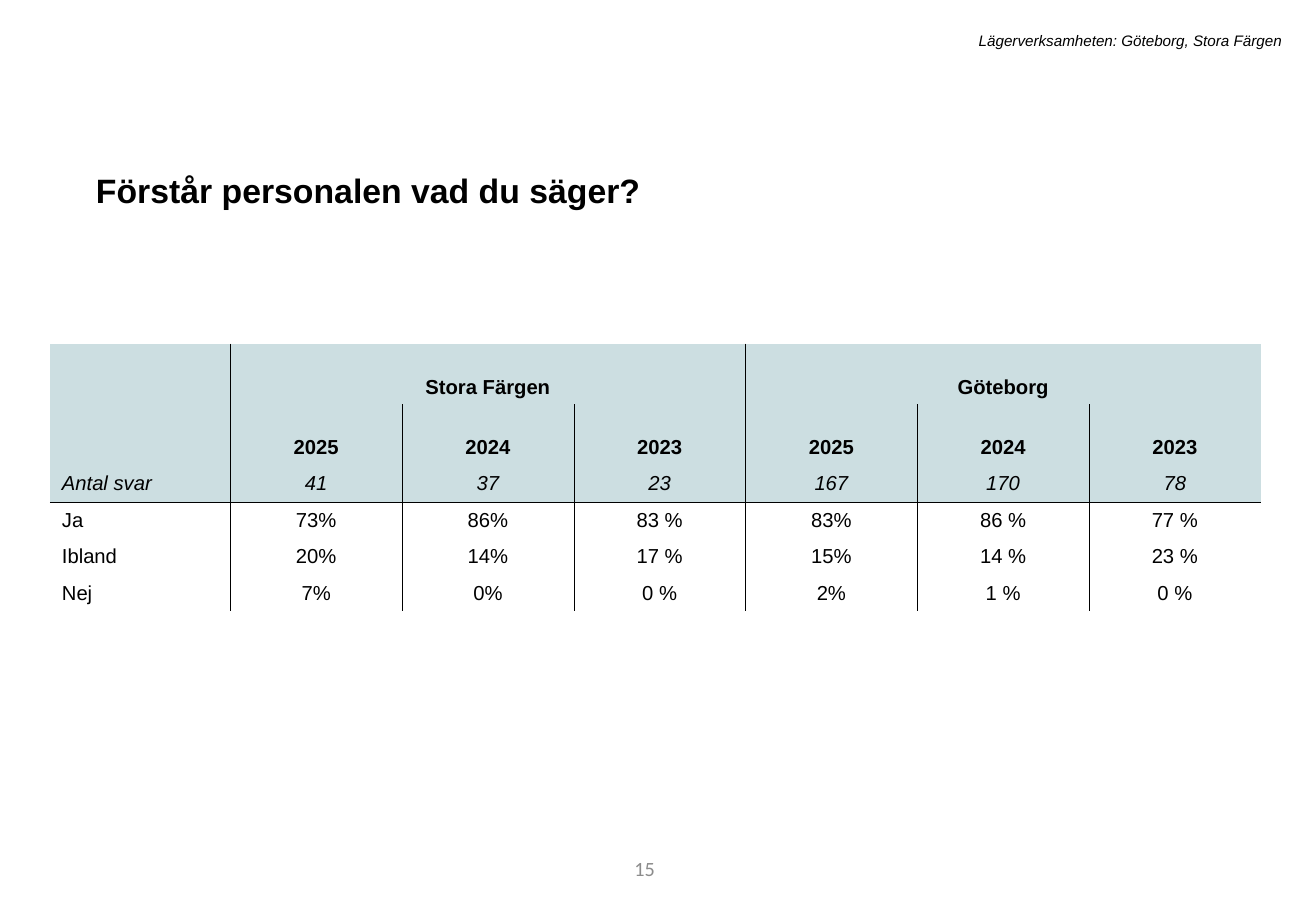
from lxml import etree
from pptx import Presentation
from pptx.dml.color import RGBColor
from pptx.enum.text import MSO_ANCHOR, MSO_AUTO_SIZE, PP_ALIGN
from pptx.oxml.ns import qn
from pptx.util import Pt

LEFT, CENTER, RIGHT = PP_ALIGN.LEFT, PP_ALIGN.CENTER, PP_ALIGN.RIGHT
TOP, MIDDLE, BOTTOM = MSO_ANCHOR.TOP, MSO_ANCHOR.MIDDLE, MSO_ANCHOR.BOTTOM
GROW = MSO_AUTO_SIZE.SHAPE_TO_FIT_TEXT
TITLE_ONLY_LAYOUT = 5
NO_STYLE = "{2D5ABB26-0587-4C30-8999-92F81FD0307C}"
BLACK, GREY, HEADER_FILL = "000000", "8C8C8C", "CCDEE1"
YEARS = ["2025", "2024", "2023"]
ROWS = [
    ["", "Stora Färgen", "", "", "Göteborg", "", ""],
    ["", *YEARS, *YEARS],
    ["Antal svar", "41", "37", "23", "167", "170", "78"],
    ["Ja", "73%", "86%", "83 %", "83%", "86 %", "77 %"],
    ["Ibland", "20%", "14%", "17 %", "15%", "14 %", "23 %"],
    ["Nej", "7%", "0%", "0 %", "2%", "1 %", "0 %"],
]
GROUP_STARTS = (1, 4)
COUNT_ROW = 2


def rgb(color):
    return RGBColor.from_string(color)


def set_format(target, values):
    for name, value in values.items():
        setattr(target, name, value)


def write(frame, text, color=BLACK, align=LEFT, **font_values):
    frame.text = text
    paragraph = frame.paragraphs[0]
    paragraph.alignment = align
    font = paragraph.runs[0].font if text else paragraph.font
    set_format(font, {"name": "Arial", "size": Pt(12), "bold": False, "italic": False, **font_values})
    font.color.rgb = rgb(color)
    return paragraph


def add_title(slide, text):
    title = slide.shapes.title
    set_format(title, {"left": Pt(49.68), "top": Pt(92.16), "width": Pt(676.8), "height": Pt(33.84)})
    set_format(title.text_frame, {"word_wrap": True, "auto_size": GROW, "vertical_anchor": TOP})
    paragraph = write(title.text_frame, text, size=Pt(20), bold=True)
    set_format(paragraph, {"line_spacing": 1.2, "space_before": Pt(10)})


def add_label(slide, text, left, top, width, height, anchor=TOP, **text_values):
    label = slide.shapes.add_textbox(Pt(left), Pt(top), Pt(width), Pt(height))
    set_format(label.text_frame, {"word_wrap": True, "vertical_anchor": anchor})
    write(label.text_frame, text, align=RIGHT, **text_values)


def add_border(cell, side):
    line = etree.SubElement(cell._tc.get_or_add_tcPr(), qn(f"a:{side}"), w=str(Pt(0.25)))
    fill = etree.SubElement(line, qn("a:solidFill"))
    etree.SubElement(fill, qn("a:srgbClr"), val=BLACK)


def format_cell(cell, row, column, text):
    is_header = row <= COUNT_ROW
    write(
        cell.text_frame,
        text,
        align=CENTER if column else LEFT,
        bold=row < COUNT_ROW,
        italic=row == COUNT_ROW,
    )
    cell.vertical_anchor = BOTTOM if row < COUNT_ROW else MIDDLE
    if column in GROUP_STARTS or (row and column):
        add_border(cell, "lnL")
    if row == COUNT_ROW:
        add_border(cell, "lnB")
    if is_header:
        cell.fill.solid()
        cell.fill.fore_color.rgb = rgb(HEADER_FILL)
    else:
        cell.fill.background()


def add_answer_table(slide):
    frame = slide.shapes.add_table(
        len(ROWS), len(ROWS[0]), Pt(29.52), Pt(203.76), Pt(717.84), Pt(158.4)
    )
    for style in frame.element.iter(qn("a:tableStyleId")):
        style.text = NO_STYLE
    table = frame.table
    set_format(table, {"first_row": False, "horz_banding": False})
    for index, column in enumerate(table.columns):
        column.width = Pt(101.8 if index else 107)
    for index, row in enumerate(table.rows):
        row.height = Pt(36 if index < COUNT_ROW else 21.5)
    for start in GROUP_STARTS:
        table.cell(0, start).merge(table.cell(0, start + len(YEARS) - 1))
    for row, texts in enumerate(ROWS):
        for column, text in enumerate(texts):
            format_cell(table.cell(row, column), row, column, text)


def main():
    presentation = Presentation()
    set_format(presentation, {"slide_width": Pt(780), "slide_height": Pt(540)})
    slide = presentation.slides.add_slide(presentation.slide_layouts[TITLE_ONLY_LAYOUT])
    add_label(slide, "15", 219.6, 500.4, 175.68, 28.8, anchor=MIDDLE, color=GREY, name="Calibri")
    add_title(slide, "Förstår personalen vad du säger?")
    add_answer_table(slide)
    add_label(
        slide, "Lägerverksamheten: Göteborg, Stora Färgen",
        128.88, 15.12, 637.92, 18, size=Pt(9), italic=True,
    )
    presentation.save("out.pptx")


if __name__ == "__main__":
    main()
